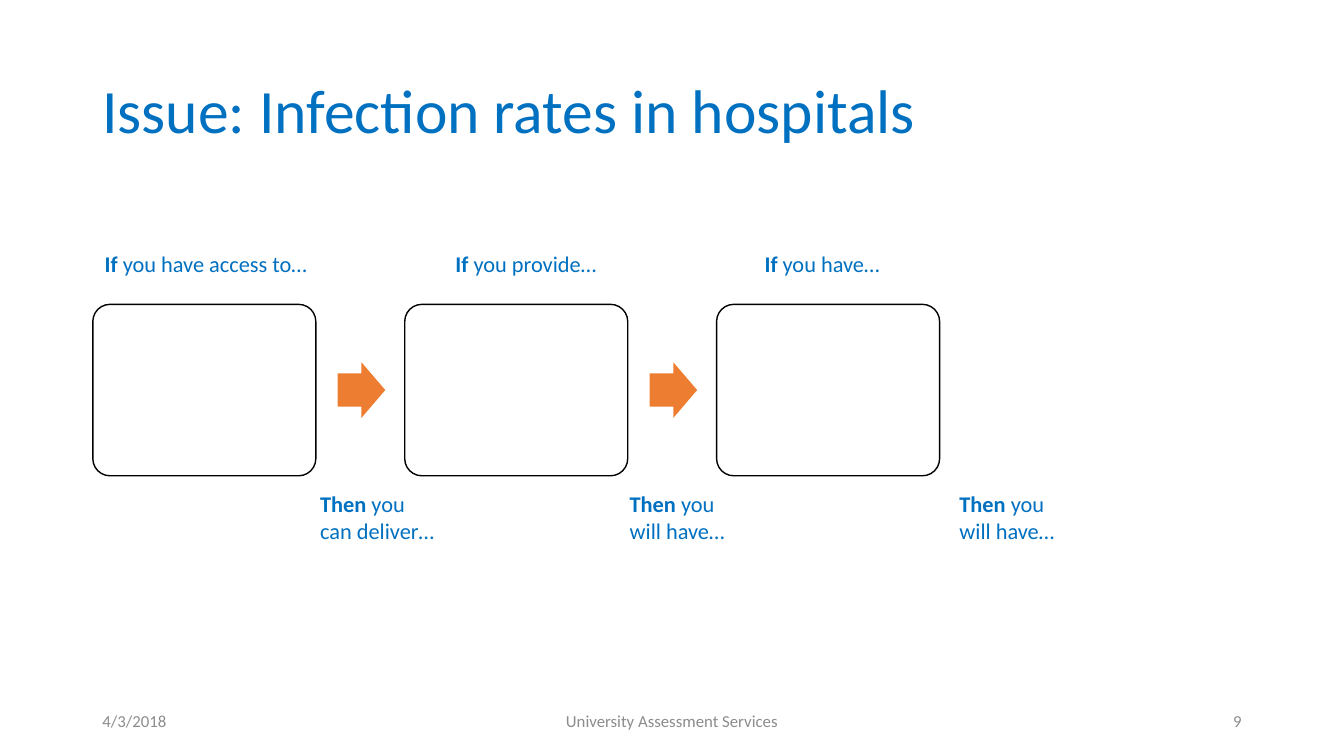
from dataclasses import dataclass

from pptx import Presentation
from pptx.dml.color import RGBColor
from pptx.enum.shapes import MSO_SHAPE
from pptx.enum.text import MSO_ANCHOR, PP_ALIGN
from pptx.util import Cm, Pt

ROUNDED = MSO_SHAPE.ROUNDED_RECTANGLE
ARROW = MSO_SHAPE.RIGHT_ARROW
TOP, MIDDLE = MSO_ANCHOR.TOP, MSO_ANCHOR.MIDDLE
LEFT, CENTER, RIGHT = PP_ALIGN.LEFT, PP_ALIGN.CENTER, PP_ALIGN.RIGHT

FONT = "Calibri"
COLORS = {
    "heading": "0070C0",
    "footer": "8C8C8C",
    "arrow": "ED7D31",
    "box": "FFFFFF",
    "outline": "000000",
}

# Lengths in centimetres
STEP_COUNT = 3
STEP_PITCH = 7.86
BOX_LEFT, BOX_TOP, BOX_WIDTH, BOX_HEIGHT = 2.34, 7.67, 5.62, 4.32
ARROW_WIDTH, ARROW_HEIGHT = 1.2, 1.4
ARROW_LEFT = 8.51
ARROW_TOP = BOX_TOP + (BOX_HEIGHT - ARROW_HEIGHT) / 2
IF_TOP, IF_HEIGHT = 6.17, 0.94
THEN_TOP, THEN_WIDTH, THEN_HEIGHT = 12.22, 5.11, 1.63
FOOTER_TOP, FOOTER_HEIGHT = 17.65, 1.02


@dataclass(frozen=True)
class Frame:
    left: float
    top: float
    width: float
    height: float

    def lengths(self) -> tuple[Cm, Cm, Cm, Cm]:
        return Cm(self.left), Cm(self.top), Cm(self.width), Cm(self.height)


@dataclass(frozen=True)
class Label:
    frame: Frame
    lead: str
    text: str


@dataclass(frozen=True)
class FooterItem:
    left: float
    width: float
    text: str
    align: PP_ALIGN


LABELS = [
    Label(Frame(2.39, IF_TOP, 5.84, IF_HEIGHT), "If", " you have access to…"),
    Label(Frame(11.23, IF_TOP, 4.39, IF_HEIGHT), "If", " you provide…"),
    Label(Frame(19.02, IF_TOP, 4.39, IF_HEIGHT), "If", " you have…"),
    Label(Frame(7.82, THEN_TOP, THEN_WIDTH, THEN_HEIGHT), "Then", " you\ncan deliver…"),
    Label(Frame(15.62, THEN_TOP, THEN_WIDTH, THEN_HEIGHT), "Then", " you\nwill have…"),
    Label(Frame(23.93, THEN_TOP, THEN_WIDTH, THEN_HEIGHT), "Then", " you\nwill have…"),
]
FOOTER = [
    FooterItem(2.33, 7.62, "4/3/2018", LEFT),
    FooterItem(11.22, 11.43, "University Assessment Services", CENTER),
    FooterItem(23.92, 7.62, "9", RIGHT),
]


def add_text(slide, frame: Frame, text: str, *, lead: str = "", size: float = 16,
             color: str = "heading", align: PP_ALIGN = LEFT,
             anchor: MSO_ANCHOR = TOP, line_spacing: float = 1.0) -> None:
    """Add a text box, with an optional bold lead before the text."""
    text_frame = slide.shapes.add_textbox(*frame.lengths()).text_frame
    text_frame.word_wrap = True
    text_frame.vertical_anchor = anchor
    for index, line in enumerate(text.split("\n")):
        paragraph = text_frame.add_paragraph() if index else text_frame.paragraphs[0]
        paragraph.alignment = align
        paragraph.line_spacing = line_spacing
        parts = [(lead, True)] if lead and index == 0 else []
        for part, bold in parts + [(line, False)]:
            run = paragraph.add_run()
            run.text = part
            run.font.name = FONT
            run.font.size = Pt(size)
            run.font.bold = bold
            run.font.color.rgb = RGBColor.from_string(COLORS[color])


def add_shape(slide, kind: MSO_SHAPE, frame: Frame, fill: str,
              adjustments: list[float], outline: str | None = None) -> None:
    shape = slide.shapes.add_shape(kind, *frame.lengths())
    shape.shadow.inherit = False
    for index, value in enumerate(adjustments):
        shape.adjustments[index] = value
    shape.fill.solid()
    shape.fill.fore_color.rgb = RGBColor.from_string(COLORS[fill])
    if outline:
        shape.line.color.rgb = RGBColor.from_string(COLORS[outline])
        shape.line.width = Pt(1)
    else:
        shape.line.fill.background()


def main() -> None:
    presentation = Presentation()
    presentation.slide_width = Cm(33.87)
    presentation.slide_height = Cm(19.05)
    slide = presentation.slides.add_slide(presentation.slide_layouts[6])

    # Title
    add_text(slide, Frame(2.33, 1.01, 29.21, 3.68), "Issue: Infection rates in hospitals",
             size=44, anchor=MIDDLE, line_spacing=0.9)

    # Boxes with an arrow between each pair
    for step in range(STEP_COUNT):
        offset = step * STEP_PITCH
        add_shape(slide, ROUNDED, Frame(BOX_LEFT + offset, BOX_TOP, BOX_WIDTH, BOX_HEIGHT),
                  "box", [0.1], outline="outline")
        if step < STEP_COUNT - 1:
            add_shape(slide, ARROW,
                      Frame(ARROW_LEFT + offset, ARROW_TOP, ARROW_WIDTH, ARROW_HEIGHT),
                      "arrow", [0.6, 0.5])

    # If and Then labels
    for label in LABELS:
        add_text(slide, label.frame, label.text, lead=label.lead)

    # Footer
    for item in FOOTER:
        add_text(slide, Frame(item.left, FOOTER_TOP, item.width, FOOTER_HEIGHT), item.text,
                 size=12, color="footer", align=item.align, anchor=MIDDLE)

    presentation.save("out.pptx")


if __name__ == "__main__":
    main()
